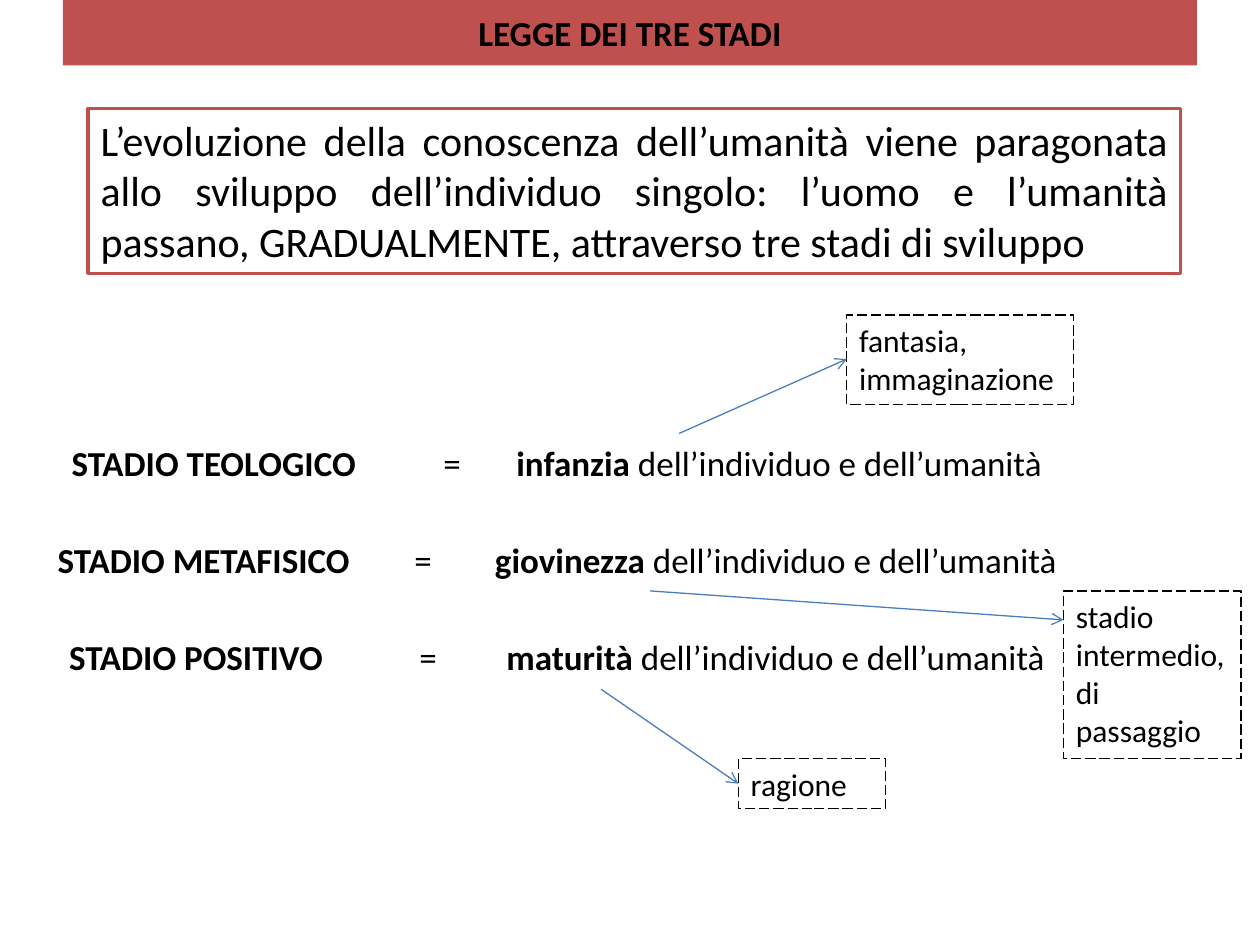
from dataclasses import dataclass
from lxml.etree import SubElement
from pptx import Presentation
from pptx.dml.color import RGBColor
from pptx.enum.dml import MSO_LINE
from pptx.enum.shapes import MSO_CONNECTOR
from pptx.enum.text import MSO_ANCHOR, PP_ALIGN
from pptx.oxml.ns import qn
from pptx.util import Inches, Pt


@dataclass(frozen=True)
class Theme:
    font: str = "Calibri"
    ink: RGBColor = RGBColor(0, 0, 0)
    paper: RGBColor = RGBColor(255, 255, 255)
    red: RGBColor = RGBColor(0xC0, 0x50, 0x4D)
    blue: RGBColor = RGBColor(0x4B, 0x7E, 0xBC)
    head: Pt = Pt(20)
    lead: Pt = Pt(24)
    note: Pt = Pt(18)


theme = Theme()
deck = Presentation()
deck.slide_width, deck.slide_height = Inches(10), Inches(7.5)
slide = deck.slides.add_slide(deck.slide_layouts[6])


def style(run, size, bold=False):
    run.font.name = theme.font
    run.font.size = size
    run.font.bold = bold
    run.font.color.rgb = theme.ink


def add_box(place, text="", size=theme.head, bold=False, fill=None):
    box = slide.shapes.add_textbox(*map(Inches, place))
    frame = box.text_frame
    frame.word_wrap = True
    if fill is not None:
        box.fill.solid()
        box.fill.fore_color.rgb = fill
    if text:
        frame.text = text
        style(frame.paragraphs[0].runs[0], size, bold)
    return box


title = add_box((0.5, 0, 9, 0.52), "LEGGE DEI TRE STADI", bold=True, fill=theme.red)
title.text_frame.vertical_anchor = MSO_ANCHOR.MIDDLE
title.text_frame.paragraphs[0].alignment = PP_ALIGN.CENTER

stages = [
    ("TEOLOGICO", "infanzia", (0.24, 3.19, 3.77)),
    ("METAFISICO", "giovinezza", (0.13, 2.96, 3.6)),
    ("POSITIVO", "maturità", (0.22, 3, 3.69)),
]
body = add_box((0.23, 3.05, 8.37, 2.89), fill=theme.paper).text_frame
body.margin_top = Inches(0.45)
for row, (stage, age, stops) in enumerate(stages):
    para = body.add_paragraph() if row else body.paragraphs[0]
    para.space_before = Pt(31.6 if row else 0)
    tabs = SubElement(para._p.get_or_add_pPr(), qn("a:tabLst"))
    for stop in stops:
        SubElement(tabs, qn("a:tab"), pos=str(Inches(stop)), algn="l")
    parts = [
        (f"\tSTADIO {stage}", True),
        ("\t=\t", False),
        (age, True),
        (" dell’individuo e dell’umanità", False),
    ]
    for text, bold in parts:
        run = para.add_run()
        run.text = text
        style(run, theme.head, bold)

lead = add_box(
    (0.7, 0.86, 8.67, 1.31),
    "L’evoluzione della conoscenza dell’umanità viene paragonata allo sviluppo "
    "dell’individuo singolo: l’uomo e l’umanità passano, GRADUALMENTE, "
    "attraverso tre stadi di sviluppo",
    theme.lead,
    fill=theme.paper,
)
lead.line.color.rgb = theme.red
lead.line.width = Pt(2)
lead.text_frame.paragraphs[0].alignment = PP_ALIGN.JUSTIFY

notes = [
    ("fantasia, immaginazione", (6.72, 2.5, 1.8, 0.71), (5.39, 3.44), 2.85),
    ("ragione", (5.86, 6.02, 1.17, 0.4), (4.77, 5.47), 6.22),
    ("stadio intermedio, di passaggio", (8.44, 4.69, 1.41, 1.33), (5.16, 4.69), 4.92),
]
for text, place, start, level in notes:
    note = add_box(place, text, theme.note)
    note.line.color.rgb = theme.ink
    note.line.width = Pt(0.75)
    note.line.dash_style = MSO_LINE.LONG_DASH
    ends = map(Inches, (*start, place[0], level))
    arrow = slide.shapes.add_connector(MSO_CONNECTOR.STRAIGHT, *ends)
    arrow.line.color.rgb = theme.blue
    arrow.line.width = Pt(0.75)
    SubElement(arrow.line._get_or_add_ln(), qn("a:tailEnd"), type="arrow")
    SubElement(arrow._element.spPr, qn("a:effectLst"))

deck.save("out.pptx")
